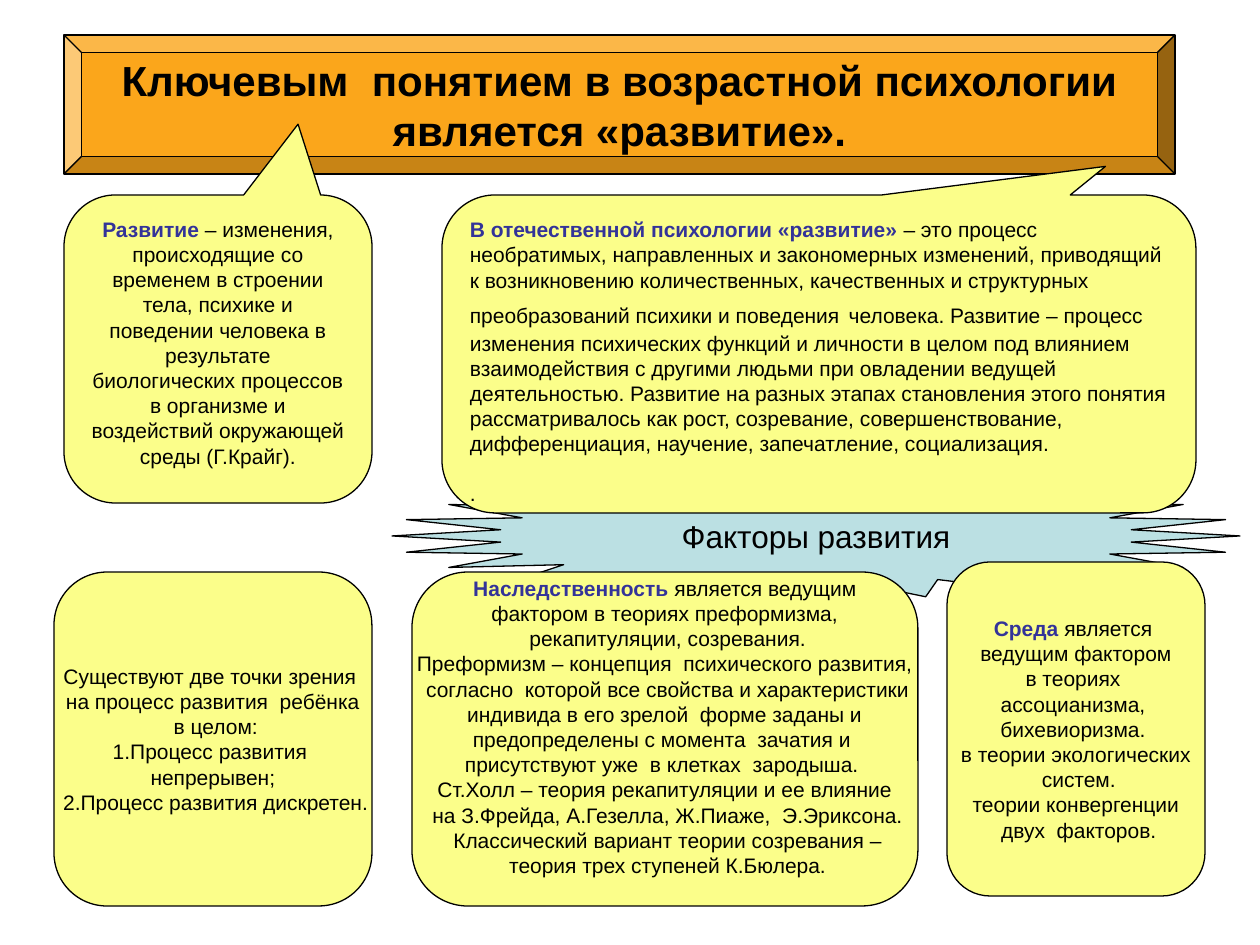
from pptx import Presentation
from pptx.dml.color import RGBColor
from pptx.enum.shapes import MSO_SHAPE as Shape
from pptx.enum.text import MSO_ANCHOR as Anchor, MSO_AUTO_SIZE as AutoSize, PP_ALIGN as Align
from pptx.util import Emu, Pt

PX = 914400 / 126
FONT = "Arial"
BLACK = RGBColor(0x00, 0x00, 0x00)
INDIGO = RGBColor(0x33, 0x33, 0x99)
YELLOW = RGBColor(0xFB, 0xFE, 0x8A)
ORANGE = RGBColor(0xFB, 0xA6, 0x1B)
PALE_BLUE = RGBColor(0xBB, 0xE0, 0xE3)

TITLE = [" Ключевым  понятием в возрастной психологии ", "является «развитие»."]

# A tuple is a bold lead followed by plain text
DEVELOPMENT = [
    ("Развитие ", "– изменения, происходящие со временем в строении тела, психике и "
     "поведении человека в результате биологических процессов в организме и "
     "воздействий окружающей среды (Г.Крайг)."),
]
DOMESTIC_VIEW = [
    ("В отечественной психологии «развитие»",
     " – это процесс необратимых, направленных и закономерных изменений, приводящий "
     "к возникновению количественных, качественных и структурных преобразований "
     "психики и поведения",
     " ",
     "человека. Развитие – процесс изменения психических функций и личности в целом "
     "под влиянием взаимодействия с другими людьми при овладении ведущей "
     "деятельностью. Развитие на разных этапах становления этого понятия "
     "рассматривалось как рост, созревание, совершенствование, дифференциация, "
     "научение, запечатление, социализация."),
    ".",
]
TWO_VIEWS = [
    "Существуют две точки зрения ",
    "на процесс развития  ребёнка",
    " в целом:",
    "1.Процесс развития ",
    "непрерывен;",
    " 2.Процесс развития дискретен.",
]
HEREDITY = [
    ("Наследственность", " является ведущим"),
    "фактором в теориях преформизма,",
    " рекапитуляции, созревания.",
    "Преформизм – концепция  психического развития,",
    " согласно  которой все свойства и характеристики",
    " индивида в его зрелой  форме заданы и ",
    "предопределены с момента  зачатия и ",
    "присутствуют уже  в клетках  зародыша. ",
    "Ст.Холл – теория рекапитуляции и ее влияние",
    " на З.Фрейда, А.Гезелла, Ж.Пиаже,  Э.Эриксона.",
    " Классический вариант теории созревания –",
    " теория трех ступеней К.Бюлера.",
]
ENVIRONMENT = [
    ("Среда ", "является "),
    "ведущим фактором",
    "в теориях ",
    "ассоцианизма, ",
    "бихевиоризма. ",
    "в теории экологических",
    " систем.",
    "теории конвергенции",
    " двух  факторов.",
]


def px(length):
    return Emu(round(length * PX))


def add_figure(page, kind, bounds, fill, adjustments):
    figure = page.shapes.add_shape(kind, *map(px, bounds))
    for index, value in enumerate(adjustments):
        figure.adjustments[index] = value
    figure.shadow.inherit = False
    figure.fill.solid()
    figure.fill.fore_color.rgb = fill
    figure.line.color.rgb = BLACK
    figure.line.width = Pt(0.75)
    return figure


def write(figure, lines, size=12, bold=False, align=Align.CENTER,
          anchor=Anchor.MIDDLE, wrap=False):
    frame = figure.text_frame
    frame.auto_size = AutoSize.NONE
    frame.word_wrap = wrap
    frame.vertical_anchor = anchor
    for index, line in enumerate(lines):
        para = frame.add_paragraph() if index else frame.paragraphs[0]
        para.alignment = align
        para.font.name = FONT
        para.font.size = Pt(size)
        para.font.bold = bold
        para.font.color.rgb = BLACK
        parts = (line,) if isinstance(line, str) else line
        for position, text in enumerate(parts):
            span = para.add_run()
            span.text = text
            if len(parts) > 1 and position == 0:
                span.font.bold = True
                span.font.color.rgb = INDIGO
            elif text == " ":
                span.font.size = Pt(18)
    return frame


def add_panel(page, bounds, lines):
    panel = add_figure(page, Shape.ROUNDED_RECTANGLE, bounds, YELLOW, [0.167])
    return write(panel, lines)


def add_callout(page, bounds, tip, lines, align):
    callout = add_figure(page, Shape.ROUNDED_RECTANGULAR_CALLOUT, bounds, YELLOW,
                         [*tip, 0.167])
    return write(callout, lines, align=align, anchor=Anchor.TOP, wrap=True)


def add_title(page, bounds):
    add_figure(page, Shape.BEVEL, bounds, ORANGE, [0.125])
    title = page.shapes.title
    title.left, title.top, title.width, title.height = map(px, bounds)
    write(title, TITLE, size=24, bold=True)
    # Bring the title text in front of its bevelled plate
    page.shapes.element.append(title.element)


def main():
    deck = Presentation()
    deck.slide_width, deck.slide_height = px(1260), px(945)
    page = deck.slides.add_slide(deck.slide_layouts[5])

    # Factors burst, behind everything else
    burst = add_figure(page, Shape.STAR_24_POINT, (392, 473, 848, 126), PALE_BLUE, [0.375])
    write(burst, ["Факторы развития"], size=18)

    add_title(page, (64, 35, 1111, 139))

    # Lower row: factors and points of view
    heredity = add_panel(page, (412, 572, 506, 334), HEREDITY)
    heredity.margin_bottom = px(31)
    views = add_panel(page, (54, 572, 318, 334), TWO_VIEWS)
    for para in views.paragraphs:
        properties = para._p.get_or_add_pPr()
        properties.set("marL", str(px(63)))
        properties.set("indent", str(px(-63)))
    add_panel(page, (947, 562, 258, 334), ENVIRONMENT)

    # Definitions pointing at the title
    add_callout(page, (64, 195, 308, 308), (0.26, -0.73), DEVELOPMENT, Align.CENTER)
    domestic = add_callout(page, (442, 195, 754, 318), (0.38, -0.59), DOMESTIC_VIEW, Align.LEFT)
    domestic.paragraphs[-1].space_before = Pt(14)

    deck.save("out.pptx")


if __name__ == "__main__":
    main()
